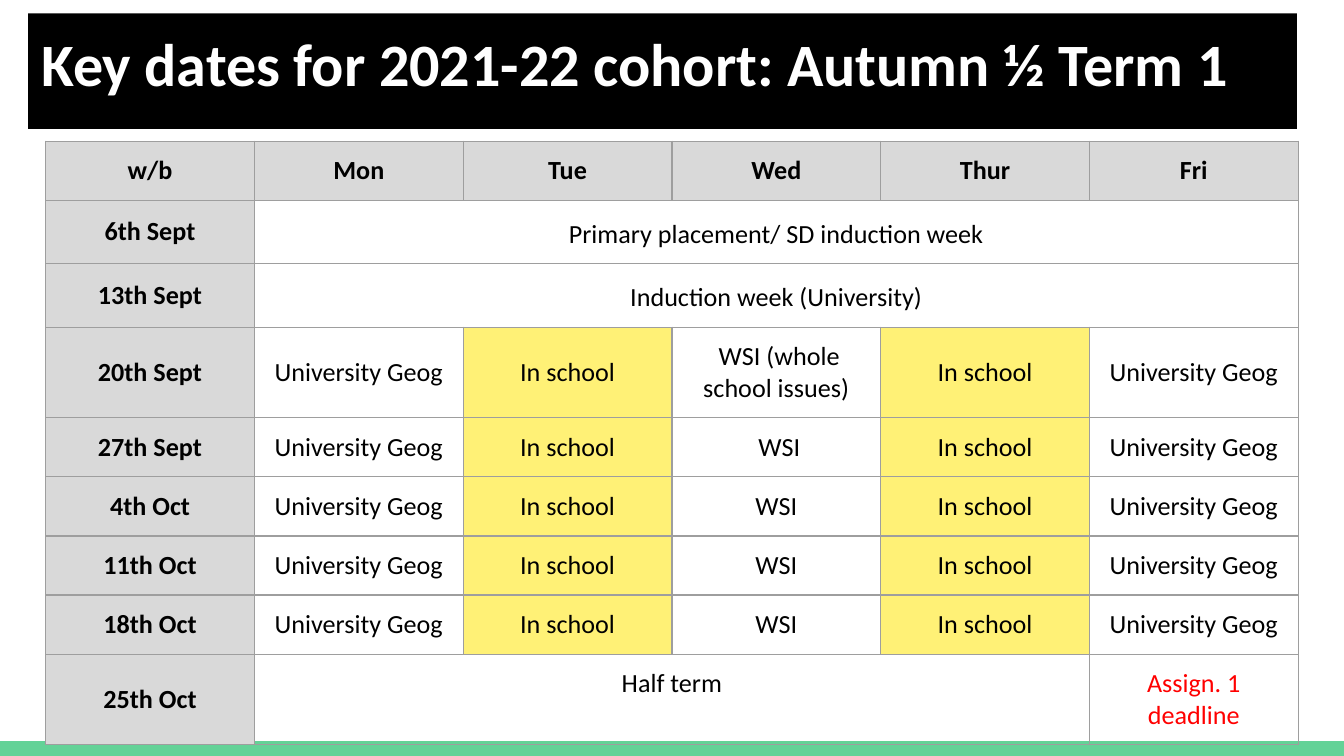
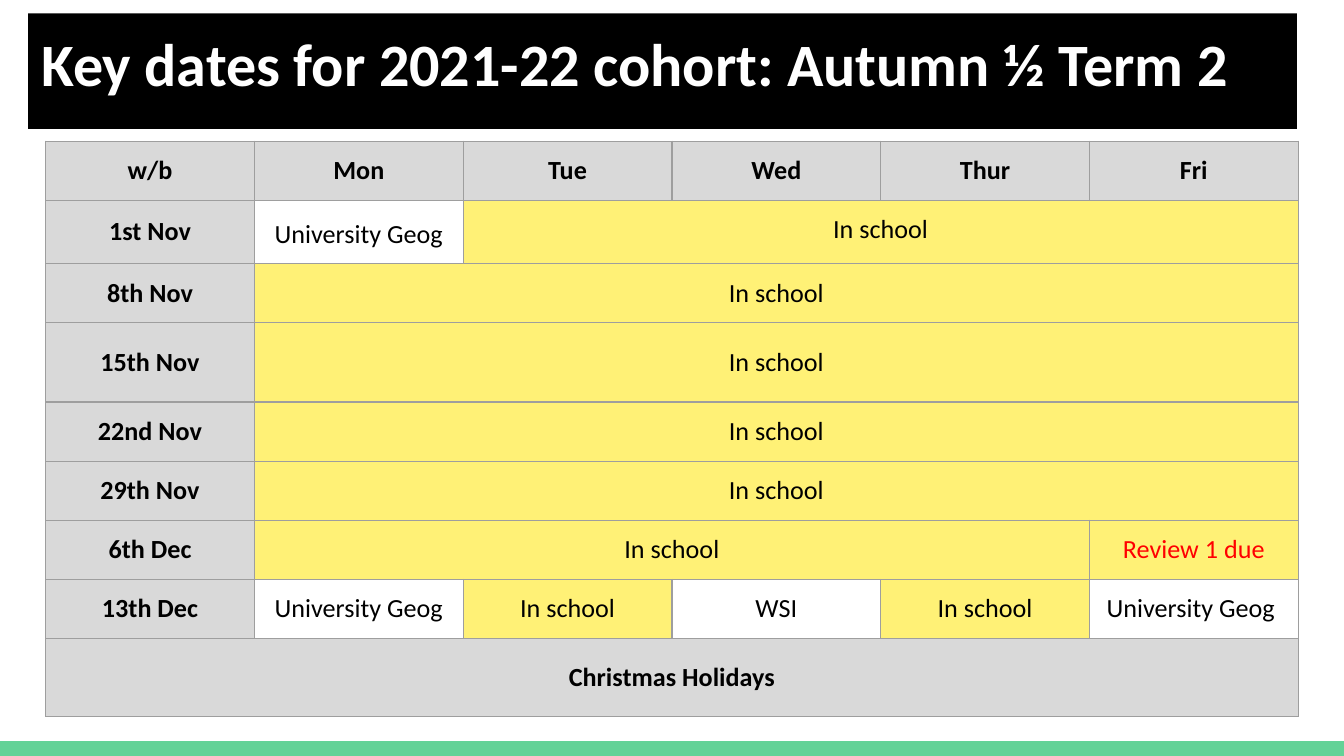
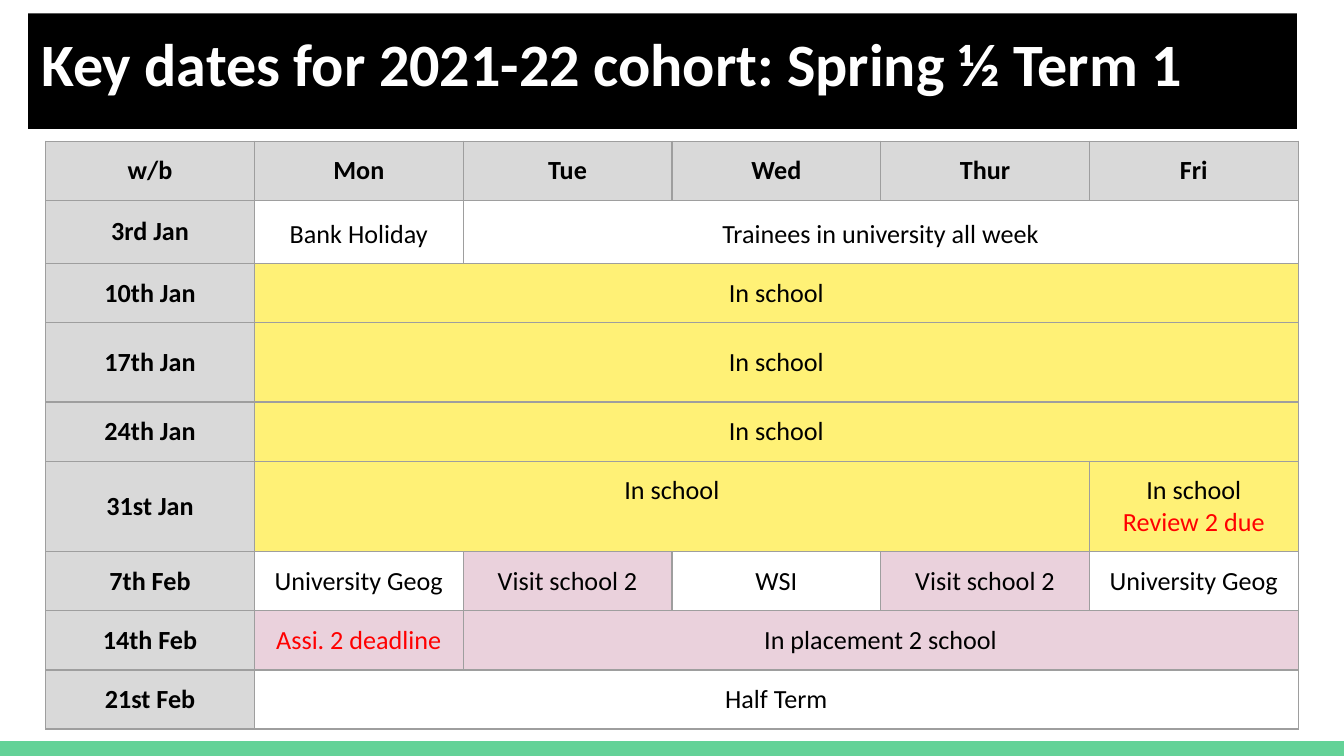
import pptx
import pptx.dml.color
import pptx.enum.shapes
import pptx.enum.text
import pptx.oxml
import pptx.oxml.ns
import pptx.util

Inches, Pt = pptx.util.Inches, pptx.util.Pt
RGBColor = pptx.dml.color.RGBColor
MSO_ANCHOR = pptx.enum.text.MSO_ANCHOR
PP_ALIGN = pptx.enum.text.PP_ALIGN

BLACK = RGBColor(0x00, 0x00, 0x00)
WHITE = RGBColor(0xFF, 0xFF, 0xFF)
RED = RGBColor(0xFF, 0x00, 0x00)
GREEN = RGBColor(0x63, 0xD2, 0x97)
GREY = RGBColor(0xD9, 0xD9, 0xD9)
YELLOW = RGBColor(0xFF, 0xF1, 0x76)
PINK = RGBColor(0xEA, 0xD1, 0xDC)
GRID_LINE = RGBColor(0x9E, 0x9E, 0x9E)

FONT = "Calibri"
SLIDE_W, SLIDE_H = 10, 5.625
FOOTER_H = 0.11
TABLE_LEFT, TABLE_TOP, TABLE_W = 0.34, 1.05, 9.32
COLUMNS = 6
ROW_H, TALL_ROW_H = 0.44, 0.59
TALL_WEEK = 3

GEOG, SCHOOL, VISIT = "University Geog", "In school", "Visit school 2"
PLACEMENT = "In placement 2 school"
ACTIVITY_FILLS = {
    SCHOOL: YELLOW,
    "Review 1 due": YELLOW,
    "In school\nReview 2 due": YELLOW,
    VISIT: PINK,
    "Assi. 2 deadline": PINK,
    PLACEMENT: PINK,
}

# Each week is a list of (text, number of columns).
HEADINGS = [(day, 1) for day in ("w/b", "Mon", "Tue", "Wed", "Thur", "Fri")]


def whole_week(date, activity):
    return [(date, 1), (activity, 5)]


def split_week(date, wednesday="WSI", school=SCHOOL, friday=GEOG):
    """University on Monday and Friday, school on Tuesday and Thursday."""
    return [(text, 1) for text in (date, GEOG, school, wednesday, school, friday)]


# Half term, height of the last row, weeks, rows with looser line spacing.
HALF_TERMS = [
    ("Autumn ½ Term 1", 0.58, [
        whole_week("6th Sept", "Primary placement/ SD induction week"),
        whole_week("13th Sept", "Induction week (University)"),
        split_week("20th Sept", " WSI (whole school issues)"),
        split_week("27th Sept", " WSI"),
        split_week("4th Oct"),
        split_week("11th Oct"),
        split_week("18th Oct"),
        [("25th Oct", 1), ("Half term", 4), ("Assign. 1 deadline", 1)],
    ], (1, 2)),
    ("Autumn ½ Term 2", 0.58, [
        [("1st Nov", 1), (GEOG, 1), (SCHOOL, 4)],
        whole_week("8th Nov", SCHOOL),
        whole_week("15th Nov", SCHOOL),
        whole_week("22nd Nov", SCHOOL),
        whole_week("29th Nov", SCHOOL),
        [("6th Dec", 1), (SCHOOL, 4), ("Review 1 due", 1)],
        split_week("13th Dec", friday="University Geog "),
        [("Christmas Holidays", COLUMNS)],
    ], (1,)),
    ("Spring ½ Term 1", ROW_H, [
        [("3rd Jan", 1), ("Bank Holiday", 1), ("Trainees in university all week", 4)],
        whole_week("10th Jan", SCHOOL),
        whole_week("17th Jan", SCHOOL),
        whole_week("24th Jan", SCHOOL),
        [("31st Jan", 1), (SCHOOL, 4), ("In school\nReview 2 due", 1)],
        split_week("7th Feb", school=VISIT),
        [("14th Feb", 1), ("Assi. 2 deadline", 1), (PLACEMENT, 4)],
        whole_week("21st Feb", "Half Term"),
    ], (1,)),
]

BORDER_XML = (
    '<a:{side} xmlns:a="http://schemas.openxmlformats.org/drawingml/2006/main" w="9525">'
    '<a:solidFill><a:srgbClr val="{color}"/></a:solidFill></a:{side}>'
)

prs = pptx.Presentation()
prs.slide_width, prs.slide_height = Inches(SLIDE_W), Inches(SLIDE_H)

for half_term, last_row_h, weeks, loose_rows in HALF_TERMS:
    slide = prs.slides.add_slide(prs.slide_layouts[6])

    bands = []
    for left, top, width, height, color in (
        (0, SLIDE_H - FOOTER_H, SLIDE_W, FOOTER_H, GREEN),
        (0.21, 0.1, 9.44, 0.86, BLACK),
    ):
        band = slide.shapes.add_shape(
            pptx.enum.shapes.MSO_SHAPE.RECTANGLE,
            Inches(left), Inches(top), Inches(width), Inches(height))
        band.shadow.inherit = False
        band.fill.solid()
        band.fill.fore_color.rgb = color
        band.line.fill.background()
        bands.append(band)

    title = bands[1].text_frame
    title.word_wrap = True
    title.vertical_anchor = MSO_ANCHOR.TOP
    title.margin_left = title.margin_right = Inches(0.1)
    title.margin_top = title.margin_bottom = Inches(0.1)
    title.paragraphs[0].alignment = PP_ALIGN.LEFT
    title_run = title.paragraphs[0].add_run()
    title_run.text = f"Key dates for 2021-22 cohort: {half_term}"
    title_run.font.name, title_run.font.size = FONT, Pt(32.2)
    title_run.font.bold = True
    title_run.font.color.rgb = WHITE

    rows = [HEADINGS] + weeks
    row_heights = [ROW_H] * len(rows)
    row_heights[TALL_WEEK] = TALL_ROW_H
    row_heights[-1] = last_row_h
    calendar = slide.shapes.add_table(
        len(rows), COLUMNS, Inches(TABLE_LEFT), Inches(TABLE_TOP),
        Inches(TABLE_W), Inches(sum(row_heights))).table
    calendar.first_row = calendar.horz_banding = False
    for column in calendar.columns:
        column.width = Inches(TABLE_W / COLUMNS)
    for row, height in zip(calendar.rows, row_heights):
        row.height = Inches(height)

    for cell in calendar.iter_cells():
        cell.margin_left = cell.margin_right = Inches(0.1)
        cell.margin_top = cell.margin_bottom = Inches(0.1)
        for side in ("lnL", "lnR", "lnT", "lnB"):
            border = BORDER_XML.format(side=side, color=GRID_LINE)
            cell._tc.get_or_add_tcPr().append(pptx.oxml.parse_xml(border))
        cell.fill.background()

    for r, week in enumerate(rows):
        c = 0
        for text, span in week:
            cell = calendar.cell(r, c)
            if span > 1:
                cell.merge(calendar.cell(r, c + span - 1))
            is_heading = r == 0 or c == 0
            fill = GREY if is_heading else ACTIVITY_FILLS.get(text)
            if fill is not None:
                cell.fill.solid()
                cell.fill.fore_color.rgb = fill
            centred = r > 0 and (c == 0 or r == TALL_WEEK)
            cell.vertical_anchor = MSO_ANCHOR.MIDDLE if centred else MSO_ANCHOR.TOP

            for i, line in enumerate(text.split("\n")):
                frame = cell.text_frame
                paragraph = frame.add_paragraph() if i else frame.paragraphs[0]
                paragraph.alignment = PP_ALIGN.CENTER
                if r in loose_rows and not is_heading and text != SCHOOL:
                    paragraph.line_spacing = 1.15
                    paragraph.space_after = Pt(12)
                run = paragraph.add_run()
                run.text = line
                run.font.name, run.font.size = FONT, Pt(14)
                run.font.bold = is_heading
                is_due = line.endswith(("deadline", "due"))
                run.font.color.rgb = RED if is_due else BLACK
            c += span

prs.save("out.pptx")
